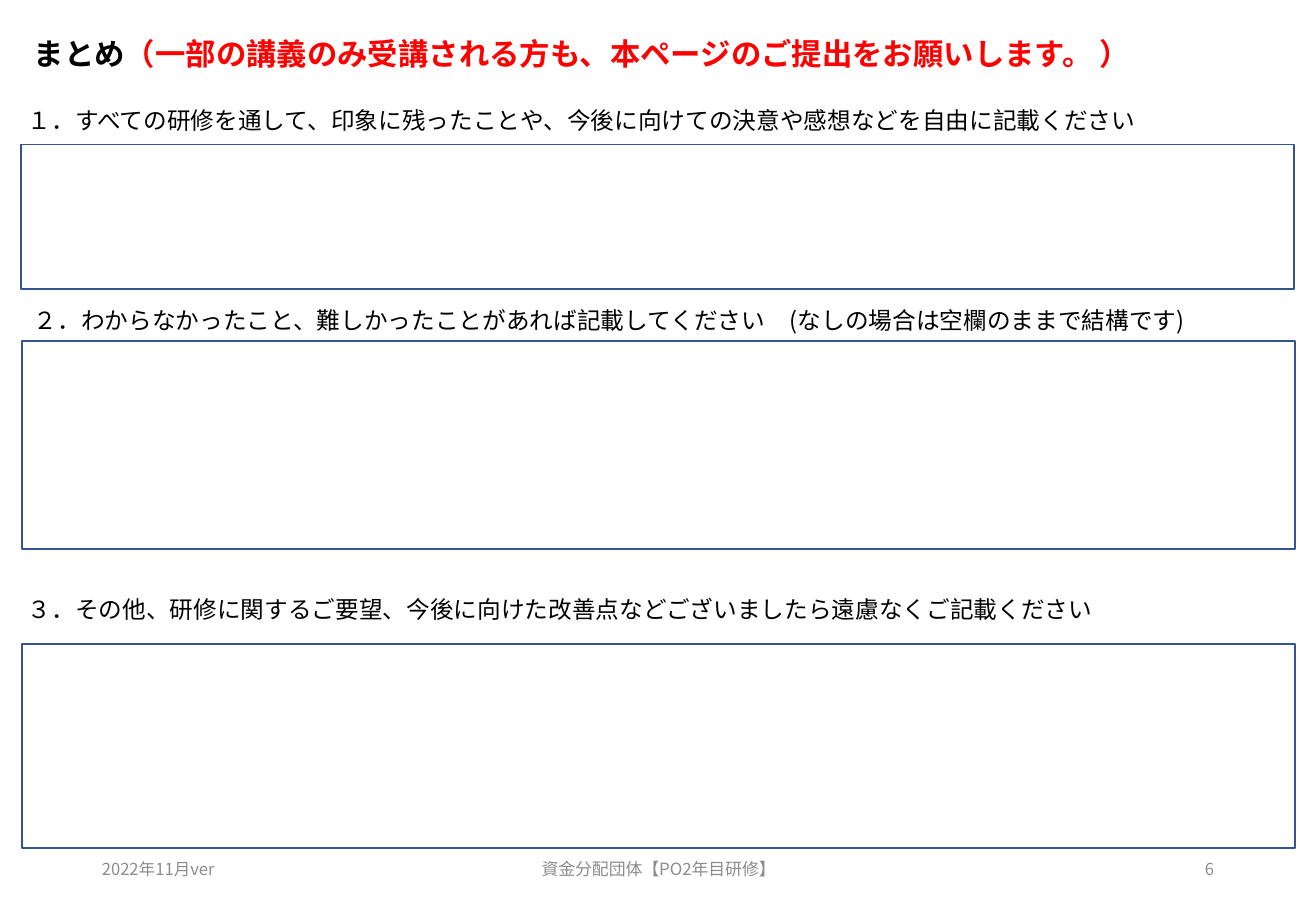
from lxml.etree import SubElement
from pptx import Presentation
from pptx.dml.color import RGBColor
from pptx.enum.shapes import MSO_SHAPE as SHAPE
from pptx.enum.text import MSO_ANCHOR as ANCHOR, PP_ALIGN as ALIGN
from pptx.oxml.ns import qn
from pptx.util import Emu, Pt

FONT = "Noto Sans CJK JP"
PX = 9144


def px(*lengths):
    return [Emu(n * PX) for n in lengths]


def color(hex_code):
    return RGBColor.from_string(hex_code)


def add_run(p, text, size=14, fill="000000", bold=False):
    r = p.add_run()
    r.text = text
    r.font.name = FONT
    r.font.size = Pt(size)
    r.font.bold = bold
    r.font.color.rgb = color(fill)
    SubElement(r.font._element, qn("a:ea")).set("typeface", FONT)


def add_text(s, box, text, align=ALIGN.LEFT, anchor=ANCHOR.TOP, **fmt):
    tf = s.shapes.add_textbox(*px(*box)).text_frame
    tf.word_wrap = True
    tf.vertical_anchor = anchor
    p = tf.paragraphs[0]
    p.alignment = align
    add_run(p, text, **fmt)
    return p


def add_answer_box(s, box):
    sp = s.shapes.add_shape(SHAPE.RECTANGLE, *px(*box))
    sp.shadow.inherit = False
    sp.fill.solid()
    sp.fill.fore_color.rgb = color("FFFFFF")
    sp.line.color.rgb = color("325491")
    sp.line.width = Pt(1)


def add_title(s):
    p = add_text(s, (18, -4, 992, 99), "まとめ", anchor=ANCHOR.MIDDLE,
                 size=18, bold=True)
    p.line_spacing = 0.9
    add_run(p, "（一部の講義のみ受講される方も、本ページのご提出をお願いします。 ）",
            size=18, fill="FF0000", bold=True)


def add_footer(s, left, width, text, align, size=9.8):
    add_text(s, (left, 695, width, 40), text, align=align,
             anchor=ANCHOR.MIDDLE, size=size, fill="8C8C8C")


def main():
    prs = Presentation()
    prs.slide_width, prs.slide_height = px(1083, 750)
    s = prs.slides.add_slide(prs.slide_layouts[6])

    add_title(s)
    questions = [
        ("１．すべての研修を通して、印象に残ったことや、今後に向けての決意や感想などを自由に記載ください",
         (13, 82), (17, 119, 1048, 119)),
        ("２．わからなかったこと、難しかったことがあれば記載してください　(なしの場合は空欄のままで結構です)",
         (18, 247), (18, 281, 1048, 171)),
        ("３．その他、研修に関するご要望、今後に向けた改善点などございましたら遠慮なくご記載ください",
         (13, 485), (18, 530, 1048, 168)),
    ]
    for question, corner, answer_box in questions:
        add_answer_box(s, answer_box)
        add_text(s, (*corner, 1048, 34), question)

    add_footer(s, 74, 244, "2022年11月ver", ALIGN.LEFT)
    add_footer(s, 359, 366, "資金分配団体【PO2年目研修】", ALIGN.CENTER, size=10)
    add_footer(s, 765, 244, "6", ALIGN.RIGHT)

    prs.save("out.pptx")


if __name__ == "__main__":
    main()
